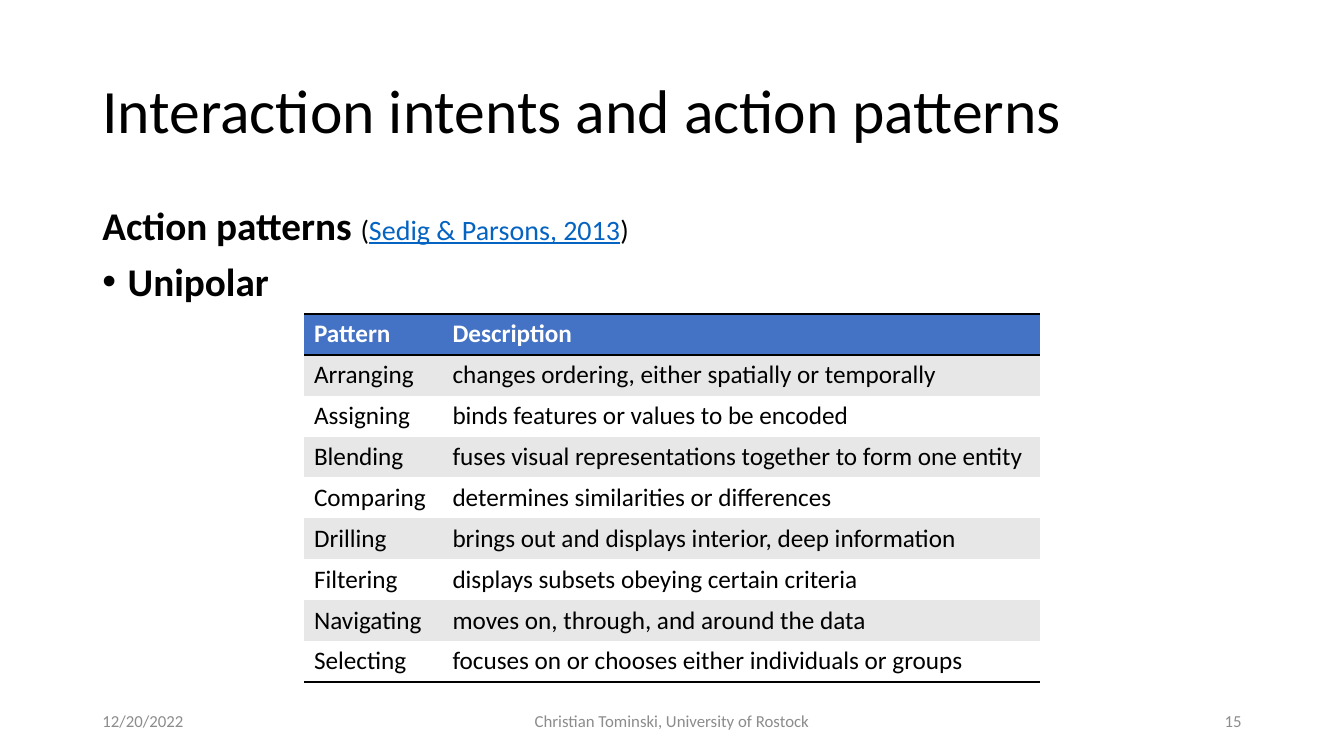
import pptx
import pptx.dml.color
import pptx.enum.text
import pptx.oxml
import pptx.oxml.ns
import pptx.util

Cm = pptx.util.Cm
Pt = pptx.util.Pt
RGBColor = pptx.dml.color.RGBColor
ALIGN = pptx.enum.text.PP_ALIGN
ANCHOR = pptx.enum.text.MSO_ANCHOR

BLACK = RGBColor(0x00, 0x00, 0x00)
WHITE = RGBColor(0xFF, 0xFF, 0xFF)
GRAY = RGBColor(0x8C, 0x8C, 0x8C)
BAND = RGBColor(0xE7, 0xE7, 0xE7)
BLUE = RGBColor(0x44, 0x72, 0xC4)
LINK = RGBColor(0x05, 0x63, 0xC1)

NO_GRID = "{2D5ABB26-0587-4C30-8999-92F81FD0307C}"

PATTERNS = [
    ("Pattern", "Description"),
    ("Arranging", "changes ordering, either spatially or temporally"),
    ("Assigning", "binds features or values to be encoded"),
    ("Blending", "fuses visual representations together to form one entity"),
    ("Comparing", "determines similarities or differences"),
    ("Drilling", "brings out and displays interior, deep information"),
    ("Filtering", "displays subsets obeying certain criteria"),
    ("Navigating", "moves on, through, and around the data"),
    ("Selecting", "focuses on or chooses either individuals or groups"),
]


class SlideBuilder:
    """Hold the base text style and the current slide, and add elements to it."""

    def __init__(self, s):
        self.s = s
        self.font = {"name": "Calibri", "size": 18, "color": BLACK}

    def run(self, p, text, **style):
        r = p.add_run()
        r.text = text
        values = {**self.font, **style}
        r.font.color.rgb = values.pop("color")
        values["size"] = Pt(values["size"])
        for name, value in values.items():
            setattr(r.font, name, value)

    def text(self, box, paragraphs, anchor=ANCHOR.TOP, bullets=(), **layout):
        sp = self.s.shapes.add_textbox(*map(Cm, box))
        tf = sp.text_frame
        tf.word_wrap = True
        tf.vertical_anchor = anchor
        for i, runs in enumerate(paragraphs):
            p = tf.add_paragraph() if i else tf.paragraphs[0]
            if i in bullets:
                self.bullet(p)
            if i:
                p.space_before = Pt(10)
            for name, value in layout.items():
                setattr(p, name, value)
            for text, style in runs:
                self.run(p, text, **style)

    def bullet(self, p):
        pPr = p._p.get_or_add_pPr()
        pPr.set("marL", str(Cm(0.64)))
        pPr.set("indent", str(-Cm(0.64)))
        ns = pptx.oxml.ns.nsdecls("a")
        for xml in (f'<a:buFont {ns} typeface="Arial"/>', f'<a:buChar {ns} char="•"/>'):
            pPr.append(pptx.oxml.parse_xml(xml))

    def border(self, cell, side):
        ns = pptx.oxml.ns.nsdecls("a")
        cell._tc.get_or_add_tcPr().append(pptx.oxml.parse_xml(
            f'<a:{side} {ns} w="{Pt(2)}"><a:solidFill>'
            f'<a:srgbClr val="{BLACK}"/></a:solidFill></a:{side}>'))

    def table(self, left, top, widths, row_height, rows):
        box = (left, top, sum(widths), row_height * len(rows))
        frame = self.s.shapes.add_table(len(rows), len(widths), *map(Cm, box))
        table = frame.table
        table.horz_banding = False
        frame._element.xpath(".//a:tableStyleId")[0].text = NO_GRID
        for column, width in zip(table.columns, widths):
            column.width = Cm(width)
        for i, row in enumerate(rows):
            table.rows[i].height = Cm(row_height)
            sides = {0: ("lnT", "lnB"), len(rows) - 1: ("lnB",)}.get(i, ())
            fill = BLUE if i == 0 else BAND if i % 2 else WHITE
            for j, text in enumerate(row):
                cell = table.cell(i, j)
                for side in sides:
                    self.border(cell, side)
                cell.fill.solid()
                cell.fill.fore_color.rgb = fill
                self.run(cell.text_frame.paragraphs[0], text,
                         bold=i == 0, color=BLACK if i else WHITE)


def main():
    prs = pptx.Presentation()
    prs.slide_width, prs.slide_height = Cm(33.87), Cm(19.05)
    b = SlideBuilder(prs.slides.add_slide(prs.slide_layouts[6]))

    b.text((2.33, 1.01, 29.21, 3.68),
           [[("Interaction intents and action patterns", {"size": 44})]],
           ANCHOR.MIDDLE, line_spacing=0.9)

    heading = {"size": 28, "bold": True}
    cite = {"size": 20}
    b.text((2.33, 5.07, 29.85, 12.09), [
        [("Action patterns ", heading), ("(", cite),
         ("Sedig & Parsons, 2013", {**cite, "color": LINK, "underline": True}),
         (")", cite)],
        [("Unipolar", heading)],
    ], bullets=(1,), line_spacing=0.9)

    for left, width, text, align in (
        (2.33, 7.62, "12/20/2022", ALIGN.LEFT),
        (11.22, 11.43, "Christian Tominski, University of Rostock", ALIGN.CENTER),
        (23.92, 7.62, "15", ALIGN.RIGHT),
    ):
        b.text((left, 17.66, width, 1.01), [[(text, {"size": 12, "color": GRAY})]],
               ANCHOR.MIDDLE, alignment=align)

    b.table(7.66, 7.91, (3.49, 15.06), 1.03, PATTERNS)
    prs.save("out.pptx")


if __name__ == "__main__":
    main()
